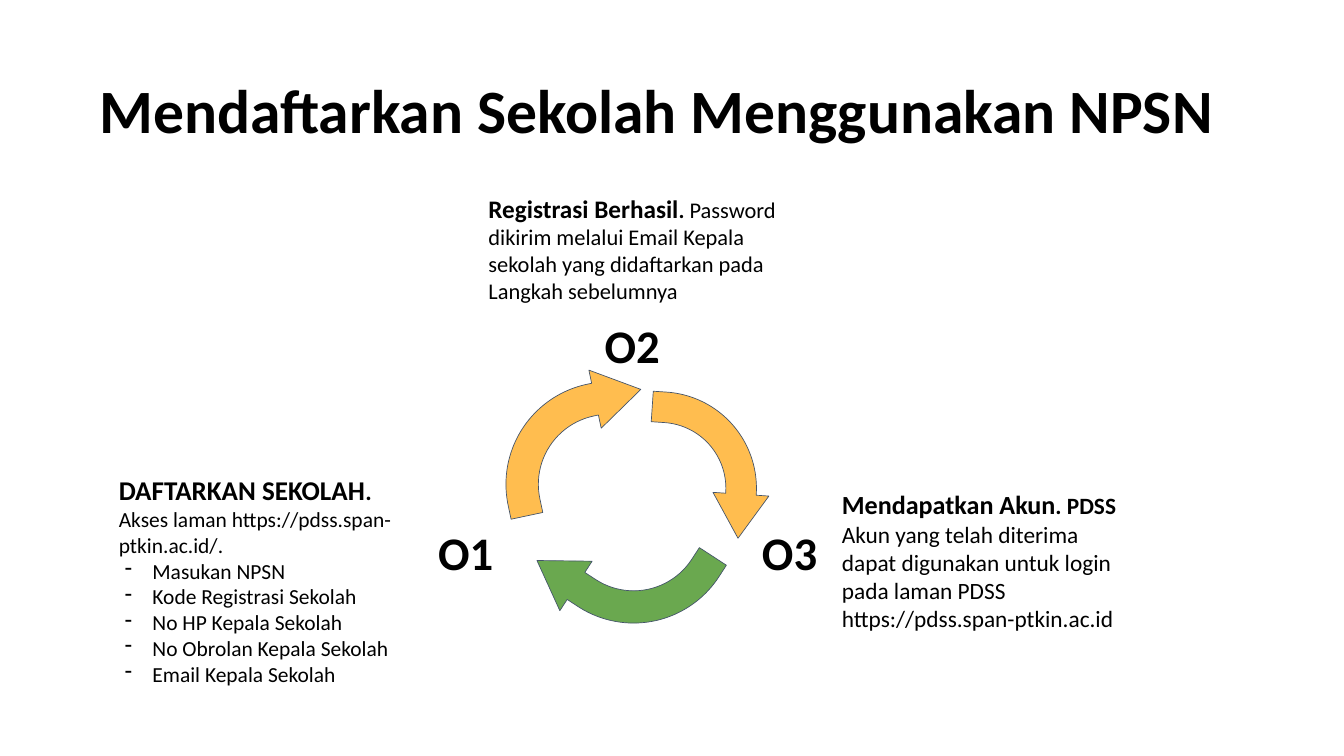
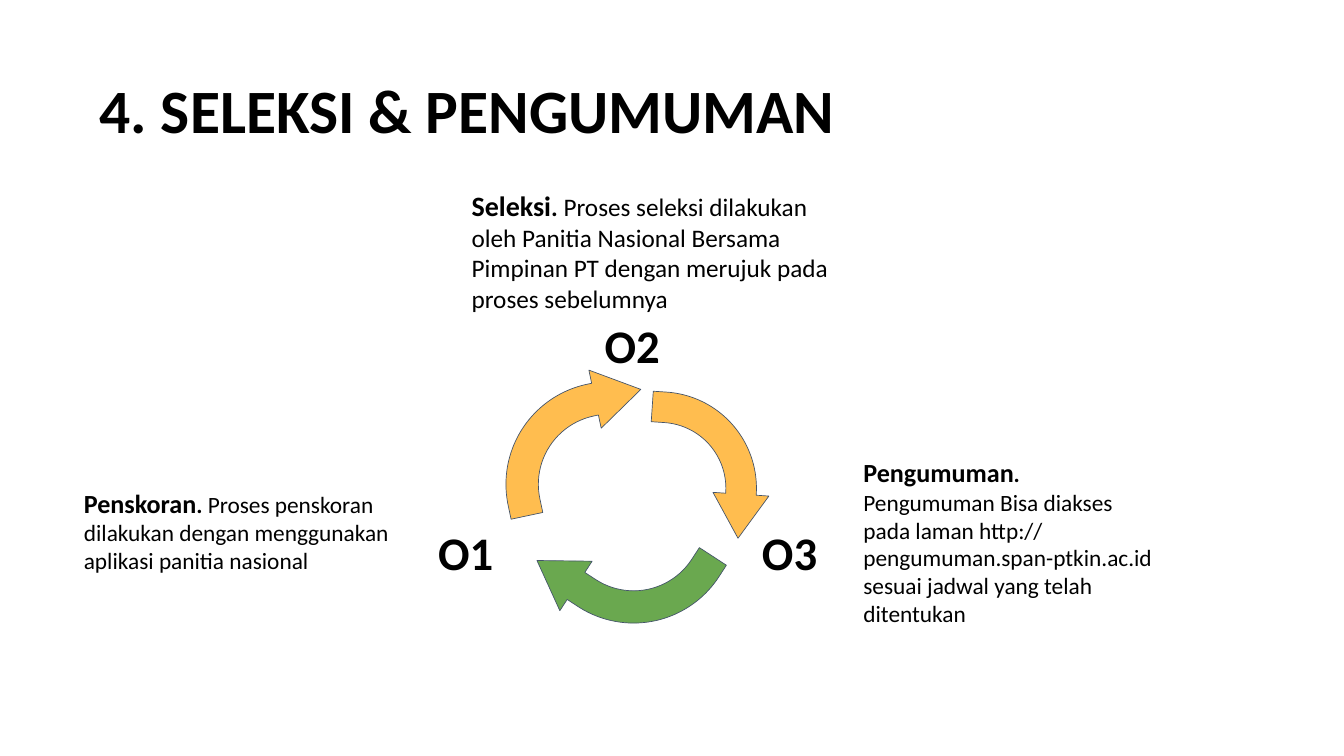
from dataclasses import dataclass
from typing import NamedTuple

import pptx
import pptx.dml.color
import pptx.enum.shapes
import pptx.enum.text
import pptx.oxml.ns
import pptx.slide
import pptx.text.text
import pptx.util
from lxml import etree

Inches = pptx.util.Inches
Pt = pptx.util.Pt


def tint(code: str) -> pptx.dml.color.RGBColor:
    return pptx.dml.color.RGBColor.from_string(code)


@dataclass(frozen=True)
class Theme:
    font: str = "Calibri"
    ink: str = "000000"
    gold: str = "FFBD4F"
    green: str = "6AA84F"
    edge: str = "44546A"
    title: int = 66
    label: int = 50
    step: int = 3
    list: int = 23
    hair: float = 0.75


THEME = Theme()


class Box(NamedTuple):
    left: float
    top: float
    width: float
    height: float

    def place(self) -> list[pptx.util.Length]:
        return [Inches(side) for side in self]


class Step(NamedTuple):
    label: str
    spot: tuple[float, float]
    arrow: Box
    turn: float
    fill: str


class Note(NamedTuple):
    box: Box
    head: str
    size: int
    stop: str = ". "
    body: str = ""
    lines: tuple[str, ...] = ()
    items: tuple[str, ...] = ()
    small: int = 0


class Page(NamedTuple):
    title: str
    notes: tuple[Note, ...]


BENDS = (0.25, 0.229, 0.361, 0.788)
STEPS = (
    Step("O1", (6.42, 7.69), Box(7.38, 5.58, 2.29, 1.93), 348, THEME.gold),
    Step("O2", (8.9, 4.61), Box(9.51, 6.02, 2.1, 1.82), 93.8, THEME.gold),
    Step("O3", (11.24, 7.69), Box(8.08, 7.6, 2.4, 1.92), 213.1, THEME.green),
)

PAGES = (
    Page("Mendaftarkan Sekolah Menggunakan NPSN", (
        Note(Box(1.67, 6.95, 5.17, 4.14), "DAFTARKAN SEKOLAH", 29, ".",
             lines=("Akses laman https://pdss.span-ptkin.ac.id/.",),
             items=("Masukan NPSN", "Kode Registrasi Sekolah",
                    "No HP Kepala Sekolah", "No Obrolan Kepala Sekolah",
                    "Email Kepala Sekolah"),
             small=THEME.list),
        Note(Box(7.17, 2.77, 4.54, 1.87), "Registrasi Berhasil", 27,
             body="Password dikirim melalui Email Kepala sekolah yang "
                  "didaftarkan pada Langkah sebelumnya"),
        Note(Box(12.43, 7.17, 4.54, 2.36), "Mendapatkan Akun", 28, ". PDSS ",
             "Akun yang telah diterima dapat digunakan untuk login "
             "pada laman PDSS",
             lines=("https://pdss.span-ptkin.ac.id",)),
    )),
    Page("4. SELEKSI & PENGUMUMAN", (
        Note(Box(1.15, 7.15, 5.17, 2.59), "Penskoran", 28,
             body="Proses penskoran dilakukan dengan menggunakan "
                  "aplikasi panitia nasional"),
        Note(Box(12.75, 6.69, 4.54, 2.78), "Pengumuman", 28,
             body="Pengumuman Bisa diakses pada laman http:// "
                  "pengumuman.span-ptkin.ac.id sesuai jadwal yang telah "
                  "ditentukan"),
        Note(Box(6.92, 2.71, 5.94, 2.07), "Seleksi", 30,
             body="Proses seleksi dilakukan oleh Panitia Nasional Bersama "
                  "Pimpinan PT dengan merujuk pada proses sebelumnya"),
    )),
)


def style(font: pptx.text.text.Font, size: int, bold: bool) -> None:
    font.size = Pt(size)
    font.bold = bold


def dress(para: pptx.text.text._Paragraph) -> None:
    para.font.name = THEME.font
    para.font.color.rgb = tint(THEME.ink)


def write(para: pptx.text.text._Paragraph, text: str, size: int,
          bold: bool = False) -> None:
    para.text = text
    dress(para)
    style(para.font, size, bold)


def dash(para: pptx.text.text._Paragraph) -> None:
    props = para._p.get_or_add_pPr()
    props.set("marL", str(Inches(0.5)))
    props.set("indent", str(Inches(-0.41)))
    qn = pptx.oxml.ns.qn
    hue = etree.SubElement(props, qn("a:buClr"))
    etree.SubElement(hue, qn("a:srgbClr"), val=THEME.ink)
    etree.SubElement(props, qn("a:buChar"), char="-")


def add_box(slide: pptx.slide.Slide, box: Box) -> pptx.text.text.TextFrame:
    frame = slide.shapes.add_textbox(*box.place()).text_frame
    frame.word_wrap = True
    frame.auto_size = pptx.enum.text.MSO_AUTO_SIZE.SHAPE_TO_FIT_TEXT
    frame.margin_top = frame.margin_bottom = Inches(0.1)
    return frame


def add_note(slide: pptx.slide.Slide, note: Note) -> None:
    frame = add_box(slide, note.box)
    para = frame.paragraphs[0]
    dress(para)
    base = note.size - THEME.step
    parts = ((note.head, note.size, True), (note.stop, base, True),
             (note.body, base, False))
    for text, size, bold in parts:
        if text:
            run = para.add_run()
            run.text = text
            style(run.font, size, bold)
    small = note.small or base
    for line in note.lines:
        write(frame.add_paragraph(), line, small)
    for item in note.items:
        para = frame.add_paragraph()
        dash(para)
        write(para, item, small)


def add_step(slide: pptx.slide.Slide, step: Step) -> None:
    frame = add_box(slide, Box(*step.spot, 1.19, 1.04))
    write(frame.paragraphs[0], step.label, THEME.label, True)
    kind = pptx.enum.shapes.MSO_SHAPE.BENT_ARROW
    arrow = slide.shapes.add_shape(kind, *step.arrow.place())
    arrow.shadow.inherit = False
    arrow.rotation = step.turn
    for index, bend in enumerate(BENDS):
        arrow.adjustments[index] = bend
    arrow.fill.solid()
    arrow.fill.fore_color.rgb = tint(step.fill)
    arrow.line.color.rgb = tint(THEME.edge)
    arrow.line.width = Pt(THEME.hair)


def add_title(slide: pptx.slide.Slide, text: str) -> None:
    title = slide.shapes.title
    title.left, title.top, title.width, title.height = Box(
        1.38, 0.6, 17.25, 2.17).place()
    frame = title.text_frame
    frame.word_wrap = True
    frame.auto_size = pptx.enum.text.MSO_AUTO_SIZE.NONE
    frame.vertical_anchor = pptx.enum.text.MSO_ANCHOR.MIDDLE
    para = frame.paragraphs[0]
    para.alignment = pptx.enum.text.PP_ALIGN.LEFT
    para.line_spacing = 0.9
    write(para, text, THEME.title, True)


def main() -> None:
    deck = pptx.Presentation()
    deck.slide_width, deck.slide_height = Inches(20), Inches(11.25)
    for page in PAGES:
        slide = deck.slides.add_slide(deck.slide_layouts[5])
        add_title(slide, page.title)
        for note in page.notes:
            add_note(slide, note)
        for step in STEPS:
            add_step(slide, step)
    deck.save("out.pptx")


if __name__ == "__main__":
    main()
